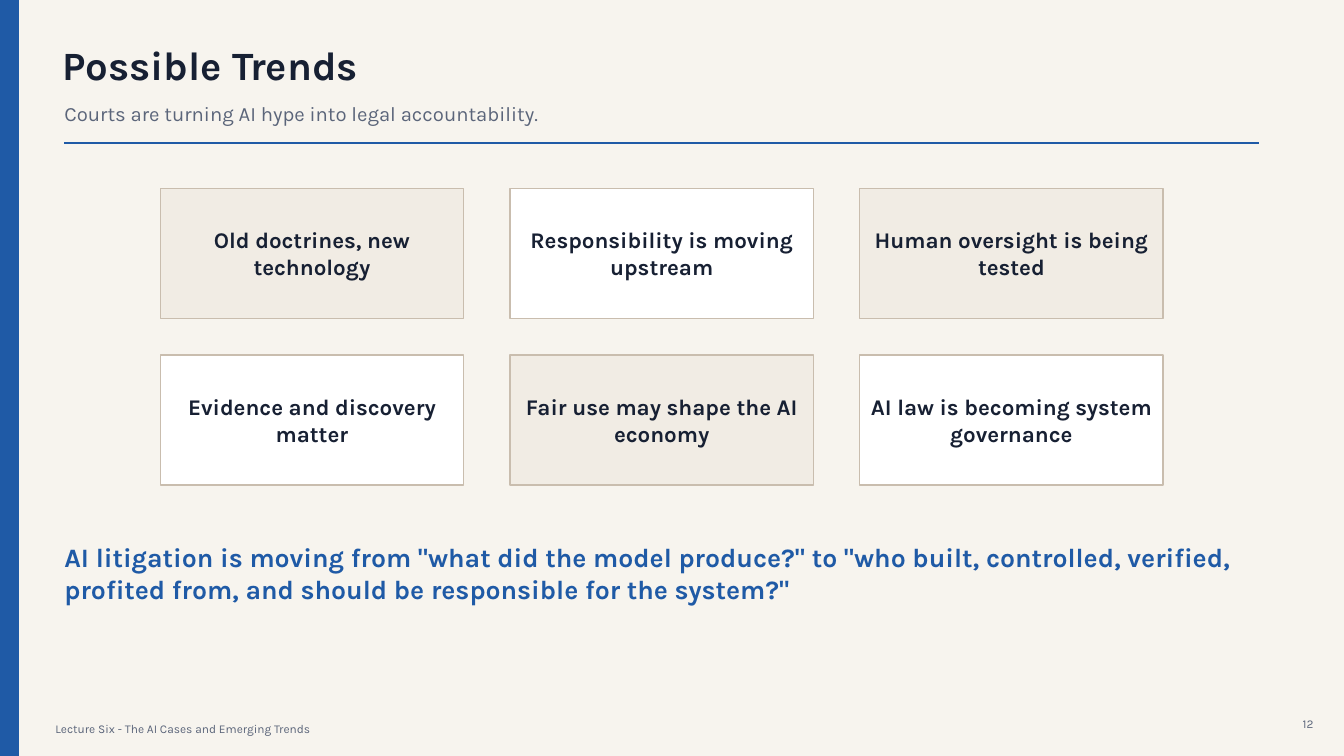
"""Build the "Possible Trends" lecture slide."""
from dataclasses import dataclass

import pptx
import pptx.dml.color
import pptx.enum.shapes
import pptx.enum.text
import pptx.oxml
import pptx.shapes.autoshape
import pptx.slide
import pptx.text.text
import pptx.util

Pt = pptx.util.Pt
RGBColor = pptx.dml.color.RGBColor
Align = pptx.enum.text.PP_ALIGN

BLUE = RGBColor(0x1F, 0x5A, 0xA6)
NAVY = RGBColor(0x17, 0x20, 0x33)
GREY = RGBColor(0x5B, 0x65, 0x7A)
CREAM = RGBColor(0xF7, 0xF4, 0xEE)
SAND = RGBColor(0xF1, 0xEC, 0xE4)
TAN = RGBColor(0xC9, 0xBD, 0xAE)
WHITE = RGBColor(0xFF, 0xFF, 0xFF)

FONT = "Karla"
SLIDE_WIDTH, SLIDE_HEIGHT = 960, 540
MARGIN, CONTENT_WIDTH, RULE_TOP = 46, 853.2, 102.4

CARD_LEFT, CARD_TOP = 114.5, 134.5
CARD_WIDTH, CARD_HEIGHT = 216.7, 93
COLUMN_STEP, ROW_STEP = 249.8, 119
TRENDS = (
    ("Old doctrines, new technology", "Responsibility is moving upstream", "Human oversight is being tested"),
    ("Evidence and discovery matter", "Fair use may shape the AI economy", "AI law is becoming system governance"),
)


@dataclass(frozen=True)
class Area:
    left: float
    top: float
    width: float
    height: float

    def lengths(self) -> tuple[int, int, int, int]:
        return Pt(self.left), Pt(self.top), Pt(self.width), Pt(self.height)


@dataclass(frozen=True)
class Style:
    size: float
    color: RGBColor
    bold: bool = False
    align: Align = Align.LEFT


@dataclass(frozen=True)
class Caption:
    text: str
    area: Area
    style: Style


TITLE = Caption("Possible Trends", Area(44.6, 30.2, 705.6, 32.4), Style(28.7, NAVY, True))
CARD_STYLE = Style(16, NAVY, True, Align.CENTER)
CAPTIONS = (
    Caption("Lecture Six - The AI Cases and Emerging Trends", Area(39.6, 513.4, 648, 14.4), Style(8.5, GREY)),
    Caption("12", Area(918, 509.8, 20.2, 14.4), Style(8.5, GREY, align=Align.RIGHT)),
    Caption("Courts are turning AI hype into legal accountability.", Area(MARGIN, 68.4, 784.8, 25.2), Style(14.5, GREY)),
    Caption(
        'AI litigation is moving from "what did the model produce?" to "who built, controlled, '
        'verified, profited from, and should be responsible for the system?"',
        Area(MARGIN, 378.7, CONTENT_WIDTH, 60.5),
        Style(19, BLUE, True),
    ),
)


def write(frame: pptx.text.text.TextFrame, text: str, style: Style) -> None:
    frame.auto_size = pptx.enum.text.MSO_AUTO_SIZE.NONE
    frame.word_wrap = True
    frame.vertical_anchor = pptx.enum.text.MSO_ANCHOR.MIDDLE
    frame.margin_left = frame.margin_top = frame.margin_right = frame.margin_bottom = 0
    para = frame.paragraphs[0]
    para.alignment = style.align
    span = para.add_run()
    span.text = text
    span.font.name = FONT
    span.font.size = Pt(style.size)
    span.font.bold = style.bold
    span.font.color.rgb = style.color


def add_title(page: pptx.slide.Slide, title: Caption) -> None:
    box = page.shapes.title
    box.left, box.top, box.width, box.height = title.area.lengths()
    write(box.text_frame, title.text, title.style)


def add_caption(page: pptx.slide.Slide, caption: Caption) -> None:
    box = page.shapes.add_textbox(*caption.area.lengths())
    write(box.text_frame, caption.text, caption.style)


def add_panel(page: pptx.slide.Slide, area: Area, fill: RGBColor, line: RGBColor) -> pptx.shapes.autoshape.Shape:
    panel = page.shapes.add_shape(pptx.enum.shapes.MSO_SHAPE.RECTANGLE, *area.lengths())
    panel.shadow.inherit = False
    panel.fill.solid()
    panel.fill.fore_color.rgb = fill
    panel.line.color.rgb = line
    panel.line.width = Pt(1)
    return panel


def add_rule(page: pptx.slide.Slide) -> None:
    rule = page.shapes.add_connector(
        pptx.enum.shapes.MSO_CONNECTOR.STRAIGHT,
        Pt(MARGIN), Pt(RULE_TOP), Pt(MARGIN + CONTENT_WIDTH), Pt(RULE_TOP),
    )
    rule.line.color.rgb = BLUE
    rule.line.width = Pt(1.25)
    effects = pptx.oxml.parse_xml('<a:effectLst xmlns:a="http://schemas.openxmlformats.org/drawingml/2006/main"/>')
    rule._element.spPr.append(effects)


def add_cards(page: pptx.slide.Slide) -> None:
    for row, trends in enumerate(TRENDS):
        for column, trend in enumerate(trends):
            area = Area(CARD_LEFT + column * COLUMN_STEP, CARD_TOP + row * ROW_STEP, CARD_WIDTH, CARD_HEIGHT)
            fill = WHITE if (row + column) % 2 else SAND
            card = add_panel(page, area, fill, TAN)
            write(card.text_frame, trend, CARD_STYLE)


def main() -> None:
    deck = pptx.Presentation()
    deck.slide_width, deck.slide_height = Pt(SLIDE_WIDTH), Pt(SLIDE_HEIGHT)
    page = deck.slides.add_slide(deck.slide_layouts.get_by_name("Title Only"))
    page.background.fill.solid()
    page.background.fill.fore_color.rgb = CREAM
    add_panel(page, Area(0, 0, 13, SLIDE_HEIGHT), BLUE, BLUE)
    add_title(page, TITLE)
    for caption in CAPTIONS:
        add_caption(page, caption)
    add_rule(page)
    add_cards(page)
    deck.save("out.pptx")


if __name__ == "__main__":
    main()
